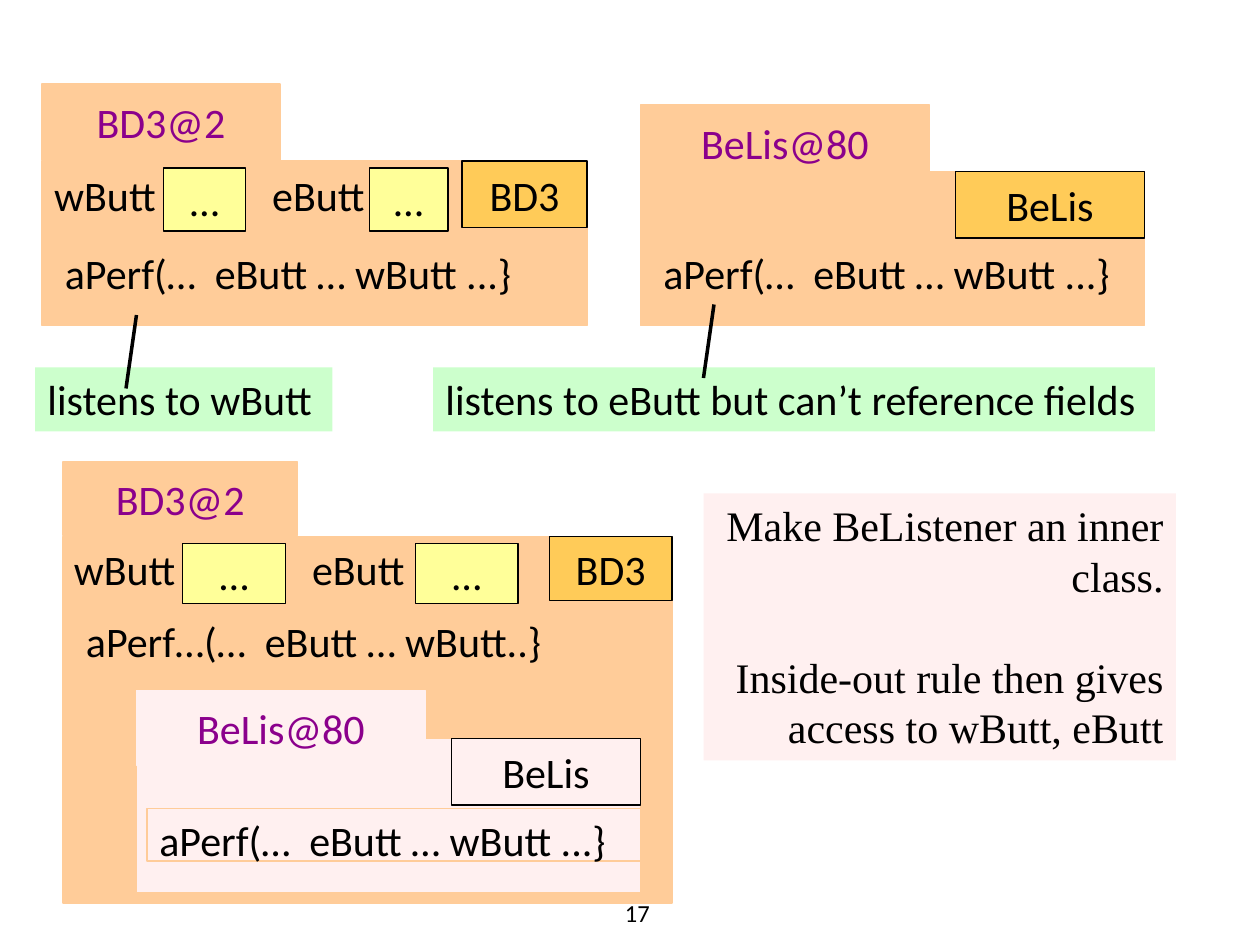
from lxml.etree import SubElement
from pptx import Presentation
from pptx.dml.color import RGBColor
from pptx.enum.shapes import MSO_CONNECTOR, MSO_SHAPE
from pptx.enum.text import MSO_ANCHOR, PP_ALIGN
from pptx.oxml.ns import qn
from pptx.util import Pt

BLACK, PURPLE = "000000", "8B008C"
PEACH, AMBER, YELLOW = "FFCC99", "FFCB58", "FFFF99"
PINK, GREEN = "FFF0F0", "CCFFCC"


def color(hex_code):
    return RGBColor.from_string(hex_code)


def style_text(paragraph, align, font_color=BLACK, size=24, name="Calibri"):
    paragraph.alignment = align
    paragraph.font.size = Pt(size)
    paragraph.font.name = name
    paragraph.font.color.rgb = color(font_color)


def add_box(slide, box, fill, line=None, line_width=0.75, text="",
            font_color=BLACK, align=PP_ALIGN.CENTER, anchor=MSO_ANCHOR.MIDDLE):
    shape = slide.shapes.add_shape(MSO_SHAPE.RECTANGLE, *map(Pt, box))
    shape.shadow.inherit = False
    shape.fill.solid()
    shape.fill.fore_color.rgb = color(fill)
    if line:
        shape.line.color.rgb = color(line)
        shape.line.width = Pt(line_width)
    else:
        shape.line.fill.background()
    if text:
        frame = shape.text_frame
        frame.word_wrap = False
        frame.vertical_anchor = anchor
        frame.text = text
        style_text(frame.paragraphs[0], align, font_color)
    return shape


def add_object(slide, box, tab, tag, method, fill=PEACH, tab_line=PEACH, tag_fill=AMBER):
    """Draw a folder: tab is (name, width, height, rise), tag is (name, width,
    height) and method is (text, width, height, drop)."""
    left, top, width, height = box
    tab_name, tab_width, tab_height, rise = tab
    tag_name, tag_width, tag_height = tag
    method_text, method_width, method_height, drop = method
    add_box(slide, box, fill, PEACH)
    add_box(slide, (left, top - rise, tab_width, tab_height), fill, tab_line,
            text=tab_name, font_color=PURPLE)
    # Class name in the upper right corner
    add_box(slide, (left + width - tag_width, top, tag_width, tag_height),
            tag_fill, BLACK, text=tag_name)
    add_box(slide, (left + 6, top + drop, method_width, method_height), fill, PEACH, 0,
            text=method_text, align=PP_ALIGN.LEFT, anchor=MSO_ANCHOR.TOP)


def add_fields(slide, top, label_size, field_height, fields):
    """Each field is (name, label left, value left, value width)."""
    for name, label_left, value_left, value_width in fields:
        add_box(slide, (label_left, top, *label_size), PEACH, PEACH, 0, text=name)
        add_box(slide, (value_left, top, value_width, field_height), YELLOW, BLACK, text="…")


def add_listener(slide, left, top, rise, **colors):
    add_object(slide, (left, top, 288, 88), ("BeLis@80", 165, 43, rise),
               ("BeLis", 108, 38), ("aPerf(…  eButt … wButt ...}", 282, 30, 40), **colors)


def add_advice(slide, box):
    frame = add_box(slide, box, PINK).text_frame
    frame.word_wrap = True
    frame.vertical_anchor = MSO_ANCHOR.TOP
    frame.text = ("Make BeListener an inner class.\n"
                  "Inside-out rule then gives access to wButt, eButt")
    for paragraph in frame.paragraphs:
        style_text(paragraph, PP_ALIGN.RIGHT, name="Times New Roman")
    frame.paragraphs[1].space_before = Pt(29)


def add_pointer(slide, left, bottom):
    connector = slide.shapes.add_connector(
        MSO_CONNECTOR.STRAIGHT, Pt(left), Pt(bottom), Pt(left + 6), Pt(bottom - 42))
    connector.line.color.rgb = color(BLACK)
    connector.line.width = Pt(2)
    SubElement(connector._element.spPr, qn("a:effectLst"))


def add_page_number(slide, box, number):
    frame = slide.shapes.add_textbox(*map(Pt, box)).text_frame
    frame.word_wrap = True
    frame.vertical_anchor = MSO_ANCHOR.BOTTOM
    frame.text = number
    style_text(frame.paragraphs[0], PP_ALIGN.LEFT, size=14)


def main():
    presentation = Presentation()
    presentation.slide_width, presentation.slide_height = Pt(720), Pt(540)
    slide = presentation.slides.add_slide(presentation.slide_layouts[6])

    add_page_number(slide, (350, 509, 36, 24.5), "17")

    # Top: two separate objects
    add_object(slide, (24, 92, 311.5, 94), ("BD3@2", 136, 43.5, 44), ("BD3", 71.5, 38),
               ("aPerf(…  eButt … wButt ...}", 282, 30, 46))
    add_fields(slide, 96, (60, 30), 36,
               [("eButt", 152, 211, 45), ("wButt", 30, 93.5, 47)])
    add_listener(slide, 366, 98, rise=38)

    # Bottom: the listener nested inside the outer object
    add_advice(slide, (402, 282, 270, 152.6))
    add_object(slide, (36, 306.5, 348, 209.5), ("BD3@2", 134, 42, 42.5), ("BD3", 70, 36.5),
               ("aPerf…(…  eButt … wButt..}", 336, 29, 41.5))
    add_fields(slide, 310.5, (58.5, 29), 34.5,
               [("eButt", 175.5, 237.5, 58.5), ("wButt", 42, 104.5, 58.5)])
    add_listener(slide, 78, 422, rise=27.5, fill=PINK, tab_line=PINK, tag_fill=PINK)

    # Captions and their pointers
    for left, width, text in ((20, 170, "listens to wButt"),
                              (247.5, 412.5, "listens to eButt but can’t reference fields")):
        add_box(slide, (left, 210, width, 36.5), GREEN, text=text,
                align=PP_ALIGN.LEFT, anchor=MSO_ANCHOR.TOP)
    add_pointer(slide, 72, 222)
    add_pointer(slide, 402, 216)

    presentation.save("out.pptx")


if __name__ == "__main__":
    main()
